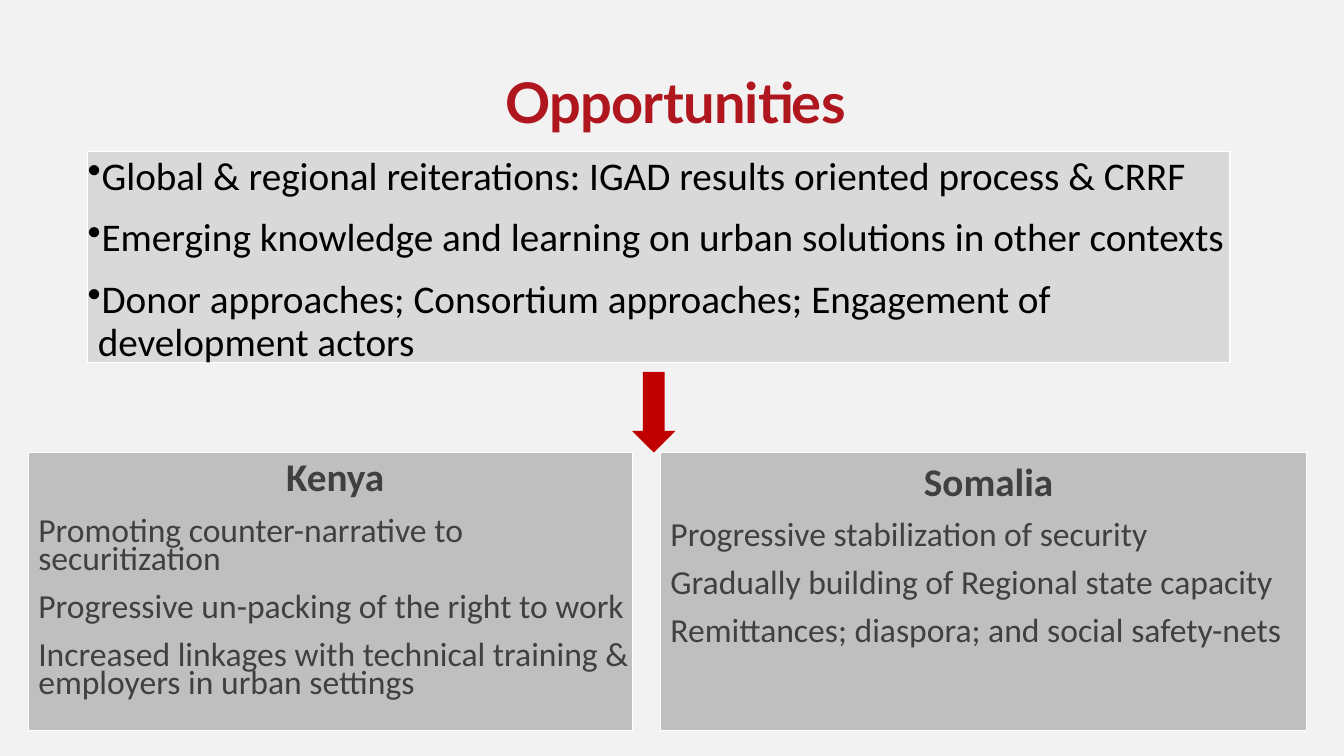
from lxml import etree
from pptx import Presentation
from pptx.dml.color import RGBColor
from pptx.enum.shapes import MSO_SHAPE
from pptx.enum.text import MSO_ANCHOR, MSO_AUTO_SIZE, PP_ALIGN
from pptx.oxml.ns import qn
from pptx.util import Inches, Pt

LEFT, CENTER = PP_ALIGN.LEFT, PP_ALIGN.CENTER
TOP, BOTTOM = MSO_ANCHOR.TOP, MSO_ANCHOR.BOTTOM
NO_AUTOFIT = MSO_AUTO_SIZE.NONE
RECTANGLE, DOWN_ARROW = MSO_SHAPE.RECTANGLE, MSO_SHAPE.DOWN_ARROW
TWO_CONTENT_LAYOUT = 3
HANG = 0.1

OPPORTUNITIES = [
    "Global & regional reiterations: IGAD results oriented process & CRRF",
    "Emerging knowledge and learning on urban solutions in other contexts",
    "Donor approaches; Consortium approaches; Engagement of development actors",
]
KENYA = [
    "Promoting counter-narrative to securitization",
    "Progressive un-packing of the right to work",
    "Increased linkages with technical training & employers in urban settings",
]
SOMALIA = [
    "Progressive stabilization of security",
    "Gradually building of Regional state capacity",
    "Remittances; diaspora; and social safety-nets",
]


def color(value):
    return RGBColor.from_string(value)


def place(part, box):
    part.left, part.top, part.width, part.height = map(Inches, box)


def paint(part, fill, line=None):
    part.fill.solid()
    part.fill.fore_color.rgb = color(fill)
    if line:
        part.line.color.rgb = color(line)
        part.line.width = Pt(0.75)


def prepare_frame(part, anchor=TOP, side=0):
    frame = part.text_frame
    frame.word_wrap = True
    frame.auto_size = NO_AUTOFIT
    frame.vertical_anchor = anchor
    frame.margin_left = frame.margin_right = Inches(side)
    frame.margin_top = frame.margin_bottom = Inches(0.05)
    return frame


def write(frame, text, size=24, font="Calibri", ink="404040", bold=False,
          align=LEFT, leading=0.9, before=12, after=2, indent=HANG,
          bullet=None, tracking=0):
    """Fill the first empty paragraph, or add one, and format it."""
    paragraph = frame.paragraphs[0]
    if paragraph.runs:
        paragraph = frame.add_paragraph()
    paragraph.alignment = align
    paragraph.line_spacing = leading
    paragraph.space_before, paragraph.space_after = Pt(before), Pt(after)

    # Indent and bullet
    properties = paragraph._p.get_or_add_pPr()
    properties.set("marL", str(Inches(indent)))
    properties.set("indent", str(-Inches(indent) if bullet else 0))
    if bullet:
        etree.SubElement(properties, qn("a:buChar")).set("char", bullet)
    else:
        etree.SubElement(properties, qn("a:buNone"))

    run = paragraph.add_run()
    run.text = text
    run.font.size, run.font.name, run.font.bold = Pt(size), font, bold
    run.font.color.rgb = color(ink)
    if tracking:
        run._r.get_or_add_rPr().set("spc", str(int(tracking * 100)))


def heading(title, box):
    place(title, box)
    frame = prepare_frame(title, anchor=BOTTOM, side=0.1)
    write(frame, "Opportunities", size=40, font="Lato", ink="AF161E", bold=True,
          align=CENTER, leading=0.85, before=0, after=0, indent=0, tracking=-0.5)


def opportunity_list(slide, box):
    panel = slide.shapes.add_shape(RECTANGLE, *map(Inches, box))
    panel.shadow.inherit = False
    paint(panel, "D9D9D9", line="FFFFFF")
    frame = prepare_frame(panel)
    for opportunity in OPPORTUNITIES:
        write(frame, opportunity, size=28, ink="000000", bullet="•")


def country_panel(body, box, country, points, leading):
    place(body, box)
    paint(body, "BFBFBF", line="FFFFFF")
    frame = prepare_frame(body)
    write(frame, country, size=28, bold=True, align=CENTER, leading=leading)
    for point in points:
        write(frame, point, leading=0.7)


def down_arrow(slide, box):
    arrow = slide.shapes.add_shape(DOWN_ARROW, *map(Inches, box))
    arrow.shadow.inherit = False
    paint(arrow, "C00000")
    arrow.line.fill.background()


def main():
    presentation = Presentation()
    presentation.slide_width = Inches(13.33)
    presentation.slide_height = Inches(7.5)
    slide = presentation.slides.add_slide(
        presentation.slide_layouts[TWO_CONTENT_LAYOUT])
    slide.background.fill.solid()
    slide.background.fill.fore_color.rgb = color("F2F2F2")

    title, kenya, somalia = slide.placeholders
    heading(title, (1.2, 0.31, 11, 1.08))

    # Country panels share one row
    row_top, row_height = 4.49, 2.76
    country_panel(kenya, (0.28, row_top, 5.99, row_height), "Kenya", KENYA, 0.9)
    country_panel(somalia, (6.55, row_top, 6.41, row_height), "Somalia", SOMALIA, 1)

    # Shared opportunities lead down to the countries
    opportunity_list(slide, (0.87, 1.5, 11.33, 2.1))
    down_arrow(slide, (6.27, row_top - 0.8, 0.43, 0.8))

    presentation.save("out.pptx")


if __name__ == "__main__":
    main()
